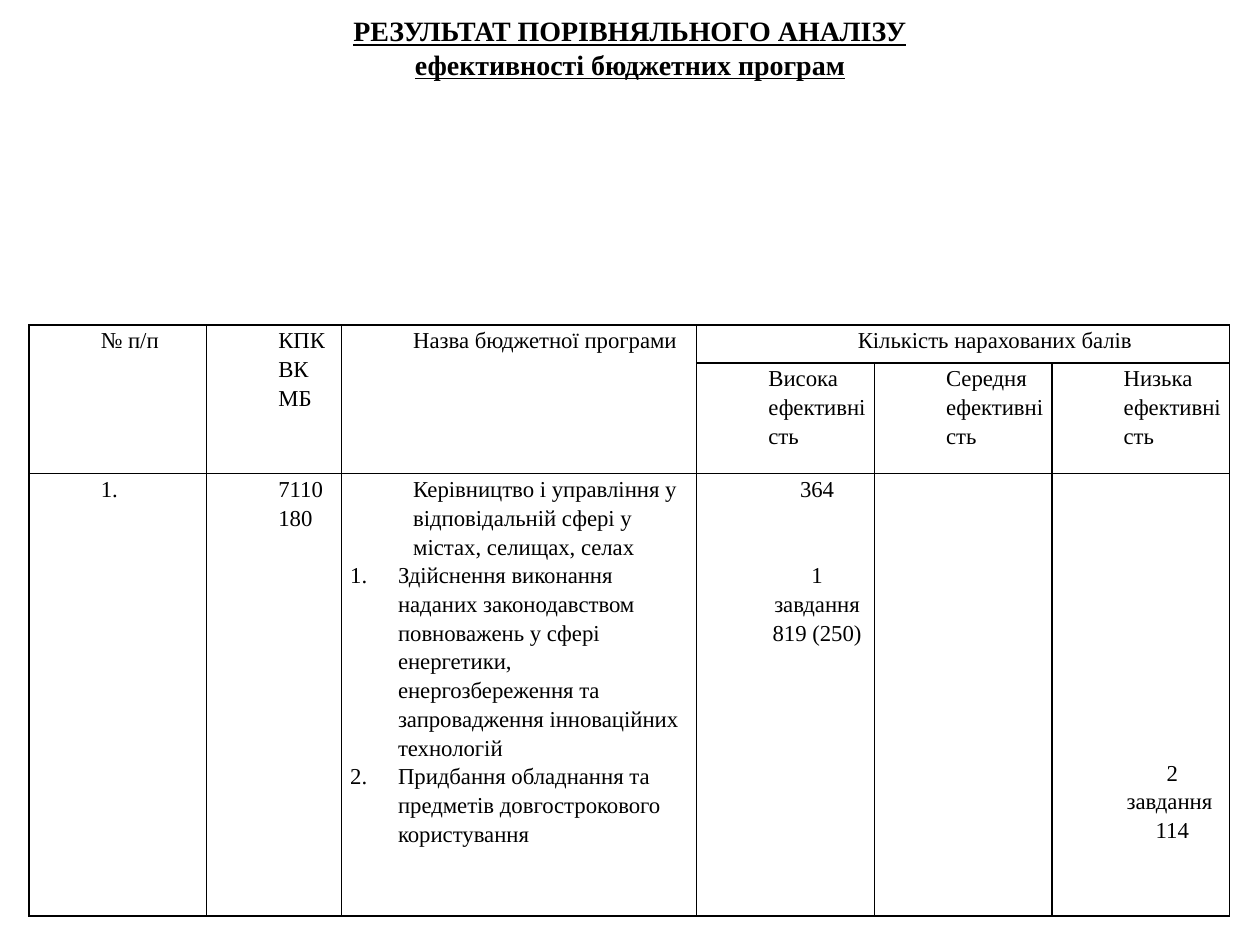
from lxml.etree import SubElement
from pptx import Presentation
from pptx.dml.color import RGBColor
from pptx.enum.text import MSO_ANCHOR, PP_ALIGN
from pptx.oxml import parse_xml
from pptx.oxml.ns import nsdecls, qn
from pptx.util import Inches, Pt

FONT = "Times New Roman"
INK = "000000"
LINE = Pt(13 * 1.15 * 1.1)  # height of one table line

# Content
TITLE = ["РЕЗУЛЬТАТ ПОРІВНЯЛЬНОГО АНАЛІЗУ", "ефективності бюджетних програм"]
COLS = [1.41, 1.07, 2.82, 1.41, 1.41, 1.41]
ROWS = [0.3, 0.88, 3.51]
HEADS = ["№ п/п", "КПКВК МБ", "Назва бюджетної програми", "Кількість нарахованих балів"]
LEVELS = ["Висока ефективність", "Середня ефективність", "Низька ефективність"]
NAME = "Керівництво і управління у відповідальній сфері у містах, селищах, селах"
TASKS = [
    "Здійснення виконання наданих законодавством повноважень у сфері енергетики, "
    "енергозбереження та запровадження інноваційних технологій",
    "Придбання обладнання та предметів довгострокового користування",
]
HIGH = ["364", "1 завдання", "819 (250)"]
LOW = ["2 завдання ", "114"]


def color(code):
    return RGBColor.from_string(code)


def write(frame, text, size=13, bold=False, line=False, align=PP_ALIGN.LEFT,
          left=0.5, hang=0, number=False, before=0, space=1.15):
    """Add one paragraph, using the empty first one when there is one."""
    para = frame.paragraphs[0]
    if para.runs:
        para = frame.add_paragraph()
    props = para._p.get_or_add_pPr()
    props.set("marL", str(Inches(left)))
    props.set("indent", str(-Inches(hang)))
    if number:
        SubElement(props, qn("a:buFont"), typeface="+mj-lt")
        SubElement(props, qn("a:buAutoNum"), type="arabicPeriod")
    para.alignment = align
    para.line_spacing = space
    if before:
        para.space_before = before
    run = para.add_run()
    run.text = text
    font = run.font
    font.name, font.size = FONT, Pt(size)
    font.bold, font.underline = bold, line
    font.color.rgb = color(INK)
    return para


def dress(cell):
    """Clear the fill, set the margins and draw the four borders."""
    cell.margin_left = cell.margin_right = Inches(0.07)
    cell.margin_top = cell.margin_bottom = 0
    cell.fill.background()
    props = cell._tc.get_or_add_tcPr()
    for spot, side in enumerate(["lnL", "lnR", "lnT", "lnB"]):
        props.insert(spot, parse_xml(
            f'<a:{side} {nsdecls("a")} w="{Pt(1)}"><a:solidFill>'
            f'<a:srgbClr val="{INK}"/></a:solidFill></a:{side}>'))


deck = Presentation()
deck.slide_width, deck.slide_height = Inches(10), Inches(7.5)
slide = deck.slides.add_slide(deck.slide_layouts[6])

# Title
box = slide.shapes.add_textbox(0, 0, Inches(10), Inches(0.98)).text_frame
box.word_wrap = True
box.vertical_anchor = MSO_ANCHOR.TOP
box.margin_top = Inches(0.11)
for text in TITLE:
    write(box, text, size=16, bold=True, line=True, align=PP_ALIGN.CENTER,
          left=0, space=1.0)

# Table grid
grid = slide.shapes.add_table(
    len(ROWS), len(COLS), Inches(0.23), Inches(2.58),
    Inches(sum(COLS)), Inches(sum(ROWS))).table
grid.first_row = grid.horz_banding = False
for col, width in zip(grid.columns, COLS):
    col.width = Inches(width)
for row, height in zip(grid.rows, ROWS):
    row.height = Inches(height)
for cell in grid.iter_cells():
    dress(cell)

# Header rows
for col in range(3):
    grid.cell(0, col).merge(grid.cell(1, col))
grid.cell(0, 3).merge(grid.cell(0, 5))
for col, text in enumerate(HEADS):
    write(grid.cell(0, col).text_frame, text,
          align=PP_ALIGN.CENTER if col == 3 else PP_ALIGN.LEFT)
for col, text in enumerate(LEVELS, 3):
    write(grid.cell(1, col).text_frame, text)

# Program row
num, code, name, high, _, low = grid.rows[2].cells
write(num.text_frame, "1.")
write(code.text_frame, "7110180")
write(name.text_frame, NAME)
for text in TASKS:
    write(name.text_frame, text, left=0.38, hang=0.38, number=True)

# Scores stand level with the tasks they belong to
for spot, text in enumerate(HIGH):
    write(high.text_frame, text, align=PP_ALIGN.CENTER,
          before=2 * LINE if spot == 1 else 0)
low.margin_top = Inches(2.25)
for text in LOW:
    write(low.text_frame, text, align=PP_ALIGN.CENTER)

deck.save("out.pptx")
